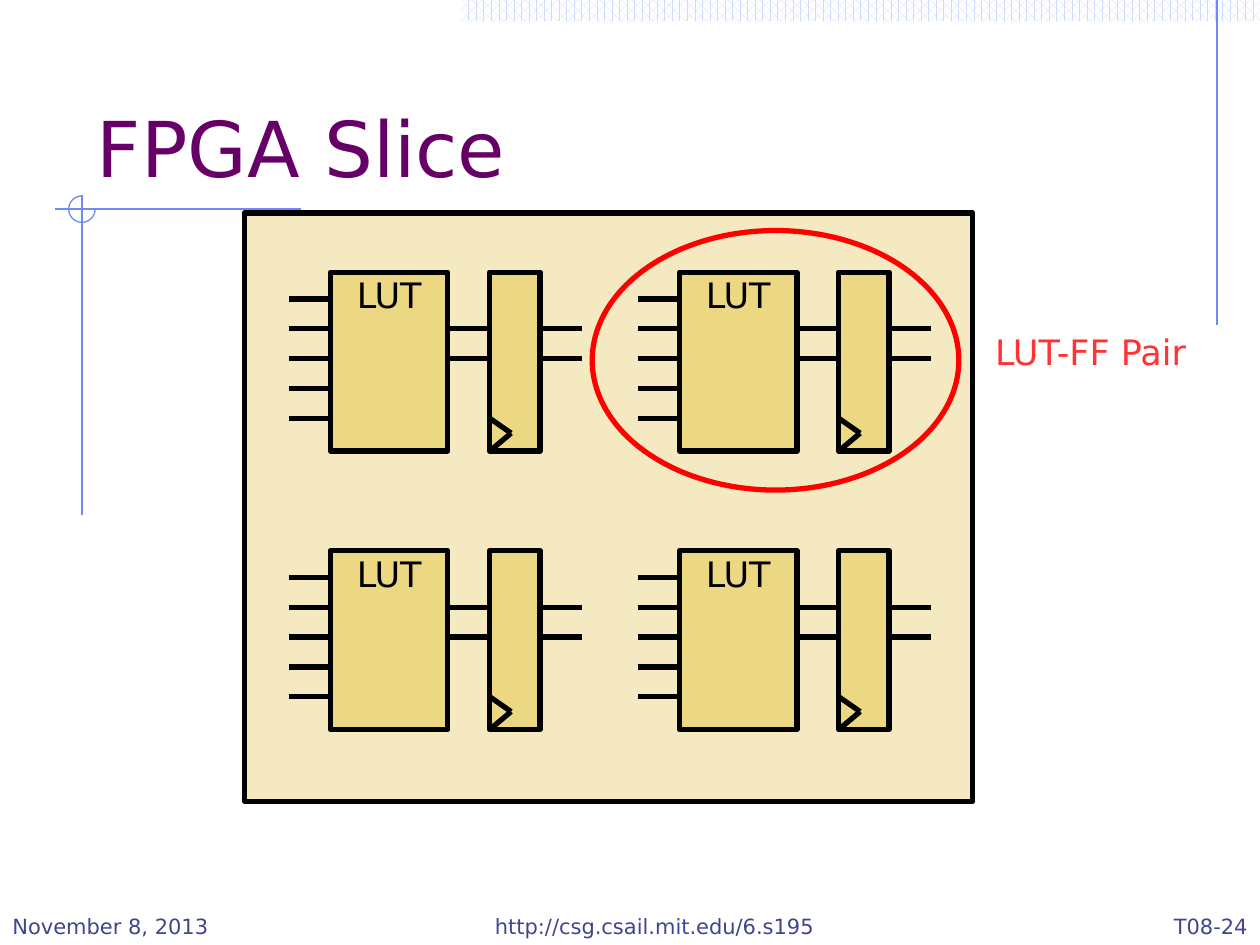
from pptx import Presentation, util as u
from pptx.dml.color import RGBColor
from pptx.enum import dml, shapes, text
from pptx.oxml.ns import qn
from lxml import etree

W, H = 10, 7.5
FONT = "DejaVu Sans"
BLACK, RED, BLUE = "000000", "FF0000", "6F89F7"
PALE, GOLD, MIST = "F4E9C1", "ECD882", "CFDBFD"
PLUM, INDIGO, CORAL = "660066", "40458C", "FF3333"
SHAPE = shapes.MSO_SHAPE
ALIGN = text.PP_ALIGN
ANCHOR = text.MSO_ANCHOR


def color(value):
    return RGBColor.from_string(value)


def inches(*values):
    return [u.Inches(v) for v in values]


def add_shape(s, kind, box, fill=None, line=None, width=3):
    sp = s.shapes.add_shape(kind, *inches(*box))
    sp.shadow.inherit = False
    if fill:
        sp.fill.solid()
        sp.fill.fore_color.rgb = color(fill)
    else:
        sp.fill.background()
    if line:
        sp.line.color.rgb = color(line)
        sp.line.width = u.Pt(width)
    else:
        sp.line.fill.background()
    return sp


def add_line(s, x1, y1, x2, y2, line=BLACK, width=3):
    c = s.shapes.add_connector(shapes.MSO_CONNECTOR.STRAIGHT, *inches(x1, y1, x2, y2))
    c.line.color.rgb = color(line)
    c.line.width = u.Pt(width)
    etree.SubElement(c._element.spPr, qn("a:effectLst"))
    return c


def write(sp, content, size=12, ink=INDIGO, align=ALIGN.LEFT, anchor=ANCHOR.BOTTOM,
          spacing=None, wrap=True):
    tf = sp.text_frame
    tf.word_wrap = wrap
    tf.vertical_anchor = anchor
    p = tf.paragraphs[0]
    p.alignment = align
    p.line_spacing = spacing
    r = p.add_run()
    r.text = content
    r.font.name = FONT
    r.font.size = u.Pt(size)
    r.font.color.rgb = color(ink)


def add_text(s, box, content, **style):
    write(s.shapes.add_textbox(*inches(*box)), content, **style)


def add_decoration(s, w, h):
    band_left, rule_x = 0.366 * w, 0.966 * w
    band = add_shape(s, SHAPE.RECTANGLE, (band_left, 0, w - band_left, 0.17))
    band.fill.patterned()
    band.fill.pattern = dml.MSO_PATTERN.PERCENT_60
    band.fill.fore_color.rgb = color(MIST)
    band.fill.back_color.rgb = color("FFFFFF")
    cross_x, cross_y, radius = 0.65, 1.66, 0.105
    for ends in ((rule_x, 0, rule_x, 2.58),
                 (0.44, cross_y, 2.39, cross_y),
                 (cross_x, 1.55, cross_x, 4.09)):
        add_line(s, *ends, line=BLUE, width=0.75)
    arc = add_shape(s, SHAPE.ARC, (cross_x - radius, cross_y - radius, 2 * radius, 2 * radius),
                    line=BLUE, width=0.75)
    arc.adjustments[0] = 0
    arc.adjustments[1] = 162


def add_footer(s, w, h):
    height = 0.5
    top = h - height
    for left, width, content, align in (
            (0, 2.08, "November 8, 2013", ALIGN.LEFT),
            (w - 2.08, 2.08, "T08-24", ALIGN.RIGHT),
            (3.39, 3.61, "http://csg.csail.mit.edu/6.s195", ALIGN.CENTER)):
        add_text(s, (left, top, width, height), content, align=align)


def add_pair(s, x, y, w, h):
    wire = w / 7
    lut_w, ff_w = 0.4 * w, 0.172 * w
    lut_x, ff_x = x + wire, x + w - wire - ff_w
    pins = [y + h * (0.15 + i / 6) for i in range(5)]
    lut = add_shape(s, SHAPE.RECTANGLE, (lut_x, y, lut_w, h), GOLD, BLACK)
    write(lut, "LUT", size=20, ink=BLACK, align=ALIGN.CENTER, anchor=ANCHOR.TOP, spacing=0.9)
    add_shape(s, SHAPE.RECTANGLE, (ff_x, y, ff_w, h), GOLD, BLACK)
    for pin in pins:
        add_line(s, x, pin, lut_x, pin)
    for pin in pins[1:3]:
        add_line(s, lut_x + lut_w, pin, ff_x, pin)
        add_line(s, ff_x + ff_w, pin, x + w, pin)
    for corner in (pins[-1], y + h):
        add_line(s, ff_x, corner, ff_x + 0.17, y + 0.9 * h)


def add_slice(s, x, y, w, h):
    add_shape(s, SHAPE.RECTANGLE, (x, y, w, h), PALE, BLACK)
    for row in range(2):
        for col in range(2):
            add_pair(s, x + 0.35 + 2.77 * col, y + 0.47 + 2.21 * row, 2.33, 1.42)
    add_shape(s, SHAPE.OVAL, (x + 2.76, y + 0.14, 2.91, 2.06), line=RED)
    add_text(s, (x + w + 0.08, y + 0.92, 1.79, 0.4), "LUT-FF Pair", size=20, ink=CORAL,
             anchor=ANCHOR.TOP, spacing=0.9, wrap=False)


def main():
    prs = Presentation()
    prs.slide_width, prs.slide_height = inches(W, H)
    s = prs.slides.add_slide(prs.slide_layouts[6])
    add_decoration(s, W, H)
    add_text(s, (0.67, 0.33, 8.5, 1.25), "FPGA Slice", size=44, ink=PLUM)
    add_footer(s, W, H)
    add_slice(s, 1.94, 1.69, 5.78, 4.67)
    prs.save("out.pptx")


if __name__ == "__main__":
    main()
